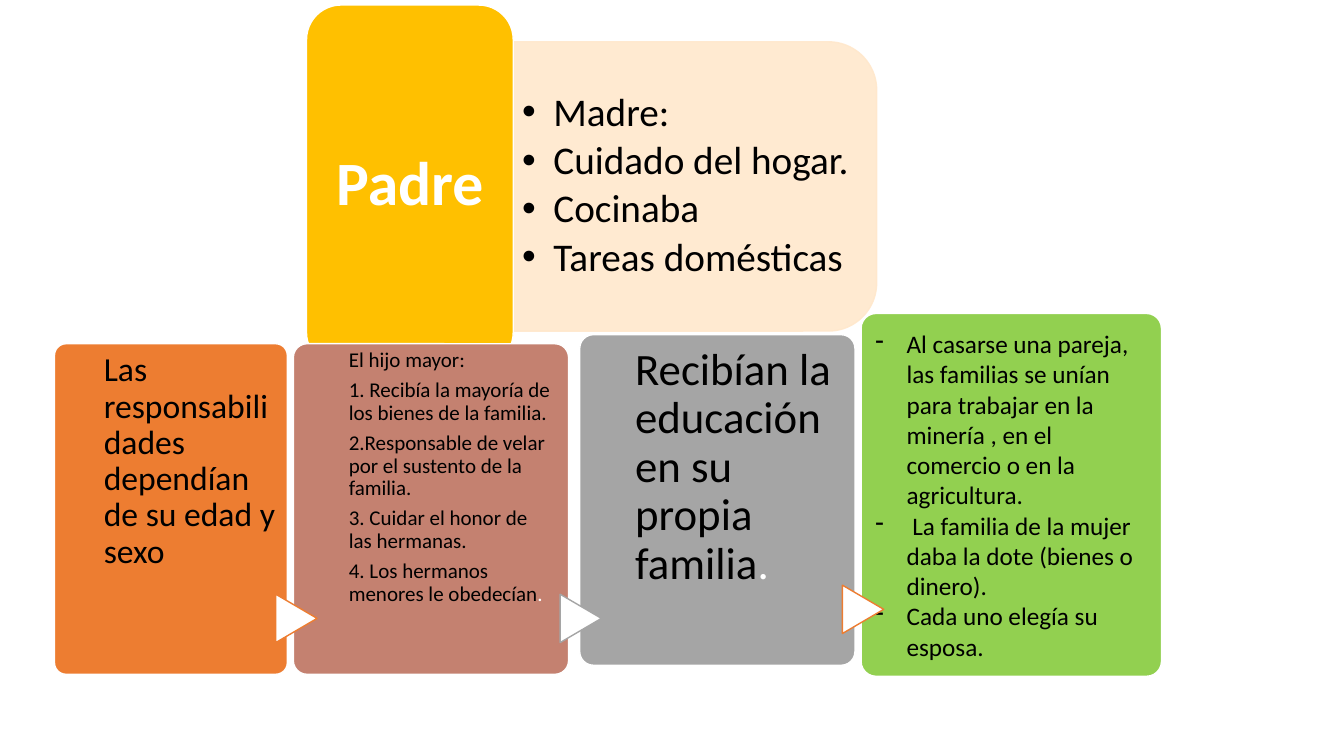
from lxml import etree
from pptx import Presentation
from pptx.dml.color import RGBColor
from pptx.enum.shapes import MSO_SHAPE as Preset
from pptx.enum.text import MSO_ANCHOR as Anchor, PP_ALIGN as Align
from pptx.oxml.ns import qn
from pptx.util import Inches, Pt

COLORS = {
    "white": "FFFFFF", "black": "000000", "cream": "FFE8CC", "gold": "FFC000",
    "orange": "ED7D31", "rose": "C48170", "gray": "A5A5A5", "green": "92D050",
}
FONT = "Calibri"
CARD_RADIUS = 0.05
HANGING = 0.31

FATHER = ["Padre"]
MOTHER = ["Madre:", "Cuidado del hogar.", "Cocinaba", "Tareas domésticas"]
MARRIAGE = [
    "Al casarse una pareja, las familias se unían para trabajar en la minería , "
    "en el comercio o en la agricultura.",
    " La familia de la mujer daba la dote (bienes o dinero).",
    "Cada uno elegía su esposa.",
]
CARDS = [
    {"box": (0.54, 3.41, 2.31, 3.28), "fill": "orange", "size": 24,
     "margins": (0.49, 0.1), "top": 0.09, "white_end": "",
     "lines": ["Las responsabilidades dependían de su edad y sexo"]},
    {"box": (2.91, 3.41, 2.73, 3.28), "fill": "rose", "size": 15,
     "margins": (0.55, 0.14), "top": 0.06, "white_end": ".",
     "lines": ["El hijo mayor:",
               "1. Recibía la mayoría de los bienes de la familia.",
               "2.Responsable de velar por el sustento de la familia.",
               "3. Cuidar el honor de las hermanas.",
               "4. Los hermanos menores le obedecían"]},
    {"box": (5.75, 3.32, 2.73, 3.28), "fill": "gray", "size": 32,
     "margins": (0.55, 0.14), "top": 0.12, "white_end": ".",
     "lines": ["Recibían la educación en su propia familia"]},
]
ARROWS = [(2.7, 5.93, "orange"), (5.52, 5.93, "gray"), (8.32, 5.84, "orange")]


def rgb(name):
    return RGBColor.from_string(COLORS[name])


def add_block(slide, preset, box, fill, line="white", radius=None):
    shape = slide.shapes.add_shape(preset, *map(Inches, box))
    shape.shadow.inherit = False
    shape.fill.solid()
    shape.fill.fore_color.rgb = rgb(fill)
    shape.line.color.rgb = rgb(line)
    shape.line.width = Pt(1)
    if radius is not None:
        shape.adjustments[0] = radius
    return shape


def style_run(run, size, color, bold=False):
    run.font.name = FONT
    run.font.size = Pt(size)
    run.font.bold = bold
    run.font.color.rgb = rgb(color)


def add_bullet(paragraph, mark):
    properties = paragraph._p.get_or_add_pPr()
    properties.set("marL", str(Inches(HANGING)))
    properties.set("indent", str(-Inches(HANGING)))
    if mark == "•":
        etree.SubElement(properties, qn("a:buFont")).set("typeface", "Arial")
    etree.SubElement(properties, qn("a:buChar")).set("char", mark)


def write_text(shape, lines, size, insets, color="black", anchor=Anchor.TOP,
               align=Align.LEFT, spacing=0.9, after=0.35, bullet=None, bold=False):
    frame = shape.text_frame
    frame.word_wrap = True
    frame.vertical_anchor = anchor
    (frame.margin_left, frame.margin_top,
     frame.margin_right, frame.margin_bottom) = map(Inches, insets)
    frame.text = "\n".join(lines)
    for paragraph in frame.paragraphs:
        paragraph.alignment = align
        paragraph.line_spacing = spacing
        paragraph.space_after = Pt(round(size * after, 1))
        if bullet:
            add_bullet(paragraph, bullet)
        for run in paragraph.runs:
            style_run(run, size, color, bold)
    return frame


def add_text(slide, box, *content, **options):
    return write_text(slide.shapes.add_textbox(*map(Inches, box)), *content, **options)


def add_parents(slide):
    panel = add_block(slide, Preset.ROUND_2_SAME_RECTANGLE,
                      (5.44, 0.03, 2.87, 3.64), "cream", "cream")
    panel.rotation = 90
    for color in panel._element.spPr.iter(qn("a:srgbClr")):
        etree.SubElement(color, qn("a:alpha")).set("val", "90000")
    add_text(slide, (5.06, 0.55, 3.5, 2.59), MOTHER, 28, (0.12, 0.06, 0.12, 0.06),
             anchor=Anchor.MIDDLE, after=0.15, bullet="•")
    add_block(slide, Preset.ROUNDED_RECTANGLE, (3.04, 0.05, 2.05, 3.59), "gold")
    add_text(slide, (3.14, 0.15, 1.85, 3.39), FATHER, 44, (0.18, 0.09, 0.18, 0.09),
             color="white", anchor=Anchor.MIDDLE, align=Align.CENTER, bold=True)


def add_cards(slide):
    for card in CARDS:
        left, top, width, height = card["box"]
        before, behind = card["margins"]
        add_block(slide, Preset.ROUNDED_RECTANGLE, card["box"], card["fill"],
                  radius=CARD_RADIUS)
        frame = add_text(slide, (left + before, top, width - before - behind, height),
                         card["lines"], card["size"], (0, card["top"], 0, 0))
        if card["white_end"]:
            ending = frame.paragraphs[-1].add_run()
            ending.text = card["white_end"]
            style_run(ending, card["size"], "white")
    marriage = add_block(slide, Preset.ROUNDED_RECTANGLE, (8.54, 3.11, 2.98, 3.6),
                         "green", radius=CARD_RADIUS)
    write_text(marriage, MARRIAGE, 18, (0.1, 0.05, 0.1, 0.05),
               anchor=Anchor.MIDDLE, spacing=1.0, after=0, bullet="-")


def add_arrows(slide):
    for left, top, line in ARROWS:
        arrow = add_block(slide, Preset.FLOWCHART_EXTRACT, (left, top, 0.48, 0.41),
                          "white", line)
        arrow.rotation = 90


def main():
    presentation = Presentation()
    presentation.slide_width = Inches(13.33)
    presentation.slide_height = Inches(7.5)
    slide = presentation.slides.add_slide(presentation.slide_layouts[6])
    add_parents(slide)
    add_cards(slide)
    add_arrows(slide)
    presentation.save("out.pptx")


if __name__ == "__main__":
    main()
